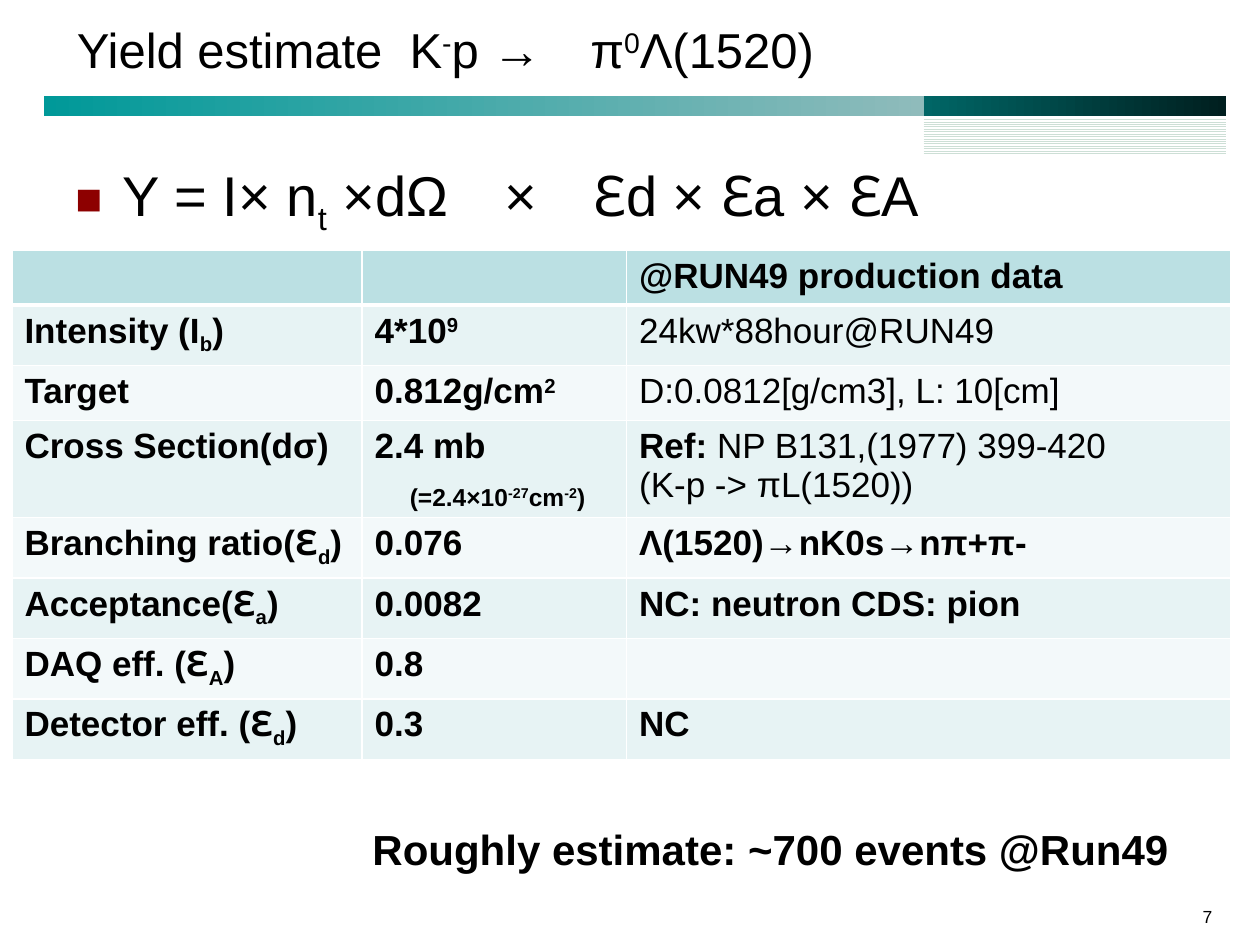
"""Build the yield estimate slide with its formula, factor table and result."""
from dataclasses import dataclass
from typing import NamedTuple, Optional

from lxml.etree import SubElement
from pptx import Presentation
from pptx.dml.color import RGBColor
from pptx.enum.dml import MSO_PATTERN
from pptx.enum.shapes import MSO_SHAPE
from pptx.enum.text import MSO_ANCHOR, PP_ALIGN
from pptx.oxml.ns import qn
from pptx.util import Cm, Pt


@dataclass(frozen=True)
class Theme:
    font: str = "Arial"
    ink: str = "000000"
    paper: str = "FFFFFF"
    teal: tuple = ("009999", "8FBBBB")
    dark: tuple = ("006666", "001F1F")
    stripe: str = "CDDFD6"
    bullet: str = "8D0000"
    header: str = "BBE0E3"
    bands: tuple = ("E7F3F4", "F3F9FA")
    title: int = 28
    formula: int = 32
    table: int = 20
    small: int = 14
    result: int = 24
    number: int = 10


class Span(NamedTuple):
    text: str
    baseline: int = 0
    bold: Optional[bool] = None
    size: Optional[int] = None


class Area(NamedTuple):
    left: float
    top: float
    width: float
    height: float

    def lengths(self) -> list:
        return [Cm(value) for value in self]


class Line(NamedTuple):
    spans: list
    bold: bool = True


THEME = Theme()
SUPER, SUB = 30, -25


def color(value: str) -> RGBColor:
    return RGBColor.from_string(value)


def line(*parts, bold: bool = True) -> Line:
    return Line([Span(part) if isinstance(part, str) else part for part in parts], bold)


def factor(name: str, index: str) -> list:
    return [line(name, Span(index, SUB), ")")]


ROWS = [
    [[], [], [line("@RUN49 production data")]],
    [factor("Intensity (I", "b"), [line("4*10", Span("9", SUPER))],
     [line("24kw*88hour@RUN49", bold=False)]],
    [[line("Target")], [line("0.812g/cm", Span("2", SUPER))],
     [line("D:0.0812[g/cm3], L: 10[cm]", bold=False)]],
    [[line("Cross Section(dσ)")],
     [line("2.4 mb"),
      line("　", Span("(=2.4×10", size=THEME.small), Span("-27", SUPER, size=THEME.small),
           Span("cm", size=THEME.small), Span("-2", SUPER, size=THEME.small),
           Span(")", size=THEME.small))],
     [line(Span("Ref: ", bold=True), "NP B131,(1977) 399-420", bold=False),
      line("(K-p -> πL(1520))", bold=False)]],
    [factor("Branching ratio(ℇ", "d"), [line("0.076")], [line("Λ(1520)→nK0s→nπ+π-")]],
    [factor("Acceptance(ℇ", "a"), [line("0.0082")], [line("NC: neutron CDS: pion")]],
    [factor("DAQ eff. (ℇ", "A"), [line("0.8")], []],
    [factor("Detector eff. (ℇ", "d"), [line("0.3")], [line("NC")]],
]
COLUMN_WIDTHS = [7.06, 5.33, 12.19]
ROW_HEIGHTS = [1.09, 1.09, 1.09, 1.96, 1.22, 1.09, 1.09, 1.09]


def write(frame, lines: list, size: int):
    """Write the lines into a text frame and return its last paragraph."""
    for index, item in enumerate(lines):
        para = frame.add_paragraph() if index else frame.paragraphs[0]
        para.font.name = THEME.font
        para.font.size = Pt(size)
        para.font.bold = item.bold
        para.font.color.rgb = color(THEME.ink)
        for span in item.spans:
            run = para.add_run()
            run.text = span.text
            if span.bold is not None:
                run.font.bold = span.bold
            if span.size:
                run.font.size = Pt(span.size)
            if span.baseline:
                run.font._element.set("baseline", str(span.baseline * 1000))
    return frame.paragraphs[-1]


def add_text(page, area: Area, item: Line, size: int, anchor=MSO_ANCHOR.TOP):
    frame = page.shapes.add_textbox(*area.lengths()).text_frame
    frame.word_wrap = True
    frame.vertical_anchor = anchor
    return write(frame, [item], size)


def add_bar(page, area: Area):
    bar = page.shapes.add_shape(MSO_SHAPE.RECTANGLE, *area.lengths())
    bar.shadow.inherit = False
    bar.line.fill.background()
    return bar.fill


def add_gradient_bar(page, area: Area, colors: tuple) -> None:
    fill = add_bar(page, area)
    fill.gradient()
    fill.gradient_angle = 0
    for stop, value in zip(fill.gradient_stops, colors):
        stop.color.rgb = color(value)


def add_striped_bar(page, area: Area) -> None:
    fill = add_bar(page, area)
    fill.patterned()
    fill.pattern = MSO_PATTERN.NARROW_HORIZONTAL
    fill.fore_color.rgb = color(THEME.stripe)
    fill.back_color.rgb = color(THEME.paper)


def add_bullet(para) -> None:
    properties = para._p.get_or_add_pPr()
    properties.set("marL", str(Cm(0.95)))
    properties.set("indent", str(-Cm(0.95)))
    bullet = [SubElement(properties, qn(f"a:{tag}")) for tag in ("buClr", "buSzPct", "buFont", "buChar")]
    SubElement(bullet[0], qn("a:srgbClr")).set("val", THEME.bullet)
    bullet[1].set("val", "80000")
    bullet[2].set("typeface", THEME.font)
    bullet[3].set("char", "■")
    properties.append(properties.find(qn("a:defRPr")))


def style_cell(cell, fill: str, bottom: int) -> None:
    """Give a cell white borders and a plain fill."""
    properties = cell._tc.get_or_add_tcPr()
    for side, width in (("lnL", 1), ("lnR", 1), ("lnT", 1), ("lnB", bottom)):
        border = SubElement(properties, qn(f"a:{side}"))
        border.set("w", str(Pt(width)))
        SubElement(SubElement(border, qn("a:solidFill")), qn("a:srgbClr")).set("val", THEME.paper)
    cell.fill.solid()
    cell.fill.fore_color.rgb = color(fill)


def add_factor_table(page, left: float, top: float) -> None:
    area = Area(left, top, sum(COLUMN_WIDTHS), sum(ROW_HEIGHTS))
    table = page.shapes.add_table(len(ROWS), len(COLUMN_WIDTHS), *area.lengths()).table
    table.first_row = table.horz_banding = False
    for column, width in zip(table.columns, COLUMN_WIDTHS):
        column.width = Cm(width)
    for index, (row, height, texts) in enumerate(zip(table.rows, ROW_HEIGHTS, ROWS)):
        row.height = Cm(height)
        fill = THEME.bands[(index - 1) % 2] if index else THEME.header
        for cell, lines in zip(row.cells, texts):
            style_cell(cell, fill, 1 if index else 3)
            write(cell.text_frame, lines, THEME.table)


def main() -> None:
    deck = Presentation()
    deck.slide_width, deck.slide_height = Cm(25.4), Cm(19.05)
    page = deck.slides.add_slide(deck.slide_layouts[6])
    add_gradient_bar(page, Area(0.89, 1.93, 17.73, 0.41), THEME.teal)
    add_striped_bar(page, Area(18.62, 2.36, 6.1, 0.76))
    add_gradient_bar(page, Area(18.62, 1.93, 6.1, 0.41), THEME.dark)
    title = line("Yield estimate  K", Span("-", SUPER), "p →　π", Span("0", SUPER), "Λ(1520)", bold=False)
    add_text(page, Area(1.3, 0.05, 22.86, 1.88), title, THEME.title, MSO_ANCHOR.MIDDLE)
    formula = line("Y = I× n", Span("t", SUB), " ×dΩ　×　ℇd × ℇa × ℇA", bold=False)
    para = add_text(page, Area(1.27, 3.12, 22.86, 1.88), formula, THEME.formula)
    para.space_before = Pt(6.4)
    add_bullet(para)
    add_factor_table(page, 0.24, 5.05)
    result = line("Roughly estimate: ~700 events @Run49")
    add_text(page, Area(7.26, 16.48, 18.14, 1.27), result, THEME.result)
    number = add_text(page, Area(18.77, 18.14, 5.92, 0.74), line("7", bold=False), THEME.number)
    number.alignment = PP_ALIGN.RIGHT
    deck.save("out.pptx")


if __name__ == "__main__":
    main()
